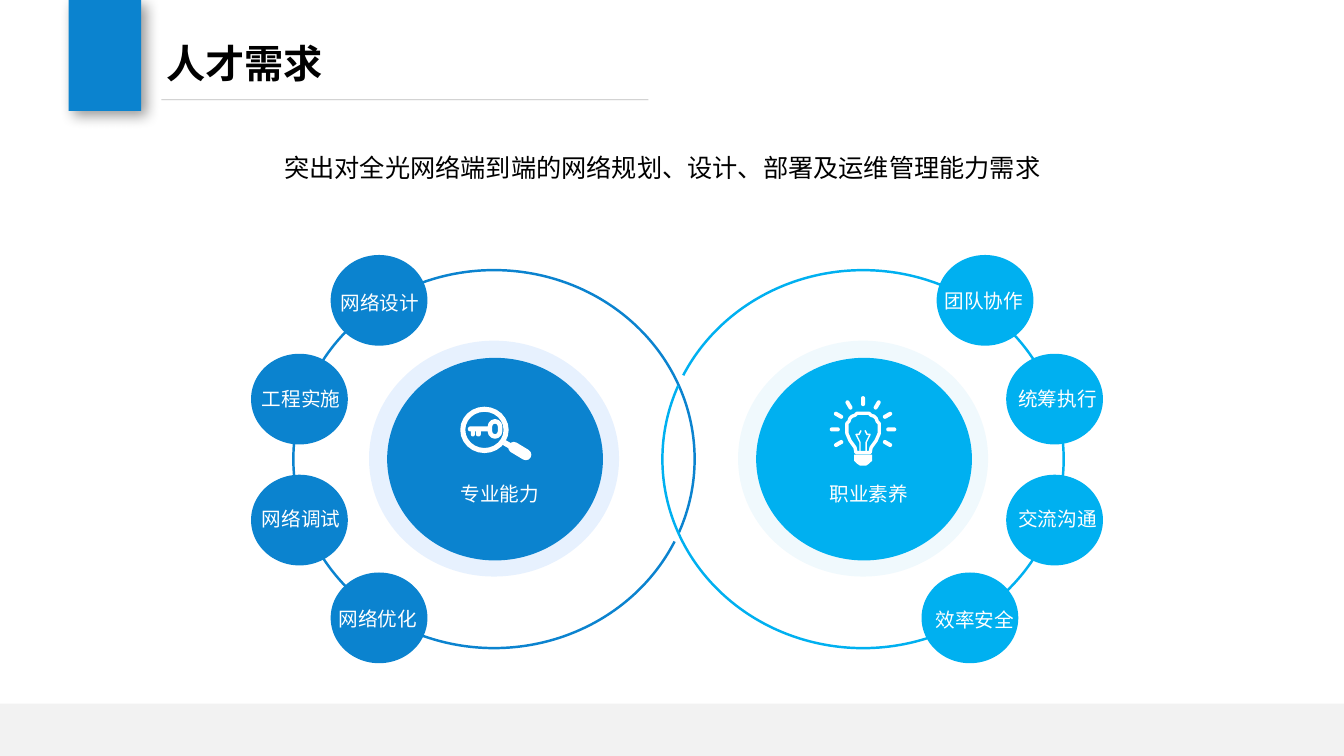
import math
from dataclasses import dataclass

import lxml.etree
import pptx
import pptx.dml.color
import pptx.enum.shapes
import pptx.enum.text
import pptx.oxml.ns
import pptx.util

SHAPE = pptx.enum.shapes.MSO_SHAPE
qn = pptx.oxml.ns.qn


@dataclass(frozen=True)
class Theme:
    blue: str = "0B83CF"
    cyan: str = "00B0F0"
    blue_halo: str = "1D78FA"
    cyan_halo: str = "6EC7EF"
    footer: str = "F2F2F2"
    rule: str = "808080"
    ink: str = "000000"
    white: str = "FFFFFF"
    title_font: str = "Arial"
    body_font: str = "Noto Sans CJK SC"
    title_size: int = 28
    lead_size: int = 18
    label_size: int = 14


def px(length):
    """100 px to the inch."""
    return pptx.util.Emu(round(length * 9144))


def rgb(color):
    return pptx.dml.color.RGBColor.from_string(color)


def add_xml(parent, tag, **values):
    attributes = {name: str(value) for name, value in values.items()}
    return lxml.etree.SubElement(parent, qn(tag), attributes)


def set_opacity(shape, percent):
    color = shape.element.spPr.find(".//" + qn("a:srgbClr"))
    add_xml(color, "a:alpha", val=percent * 1000)


class SlideBuilder:
    def __init__(self, page, theme):
        self.page = page
        self.theme = theme

    def paint(self, shape, fill=None, line=None, weight=1.75):
        shape.shadow.inherit = False
        if fill:
            shape.fill.solid()
            shape.fill.fore_color.rgb = rgb(fill)
        else:
            shape.fill.background()
        if line:
            shape.line.color.rgb = rgb(line)
            shape.line.width = pptx.util.Pt(weight)
        else:
            shape.line.fill.background()
        return shape

    def shape(self, kind, x, y, width, height, **style):
        shape = self.page.shapes.add_shape(kind, px(x), px(y), px(width), px(height))
        return self.paint(shape, **style)

    def pill(self, x, y, width, height, angle=0):
        pill = self.shape(SHAPE.ROUNDED_RECTANGLE, x, y, width, height, fill=self.theme.white)
        pill.adjustments[0] = 0.5
        pill.rotation = angle

    def arc(self, x, y, width, height, start, end, color):
        arc = self.shape(SHAPE.ARC, x, y, width, height, line=color)
        # Angles are held in 60000ths of a degree, adjustments in 100000ths
        for index, degrees in enumerate((start, end)):
            arc.adjustments[index] = degrees * 0.6

    def outline(self, points, closed=False, **style):
        builder = self.page.shapes.build_freeform(*points[0], scale=px(1))
        builder.add_line_segments(points[1:], close=closed)
        return self.paint(builder.convert_to_shape(), **style)

    def line(self, start, end, color, weight):
        line = self.page.shapes.add_connector(
            pptx.enum.shapes.MSO_CONNECTOR.STRAIGHT, *map(px, start + end))
        line.line.color.rgb = rgb(color)
        line.line.width = pptx.util.Pt(weight)
        add_xml(line.element.spPr, "a:effectLst")
        return line

    def fill_text(self, box, words, font, size, color, bold=False, spacing=None):
        para = box.text_frame.paragraphs[0]
        para.alignment = pptx.enum.text.PP_ALIGN.LEFT
        para.line_spacing = spacing
        span = para.add_run()
        span.text = words
        span.font.name = font
        span.font.size = pptx.util.Pt(size)
        span.font.bold = bold
        span.font.color.rgb = rgb(color)
        add_xml(box.element.find(".//" + qn("a:rPr")), "a:ea", typeface=self.theme.body_font)

    def title(self, words, x, y, width, height):
        box = self.page.shapes.title
        box.left, box.top, box.width, box.height = map(px, (x, y, width, height))
        box.text_frame.vertical_anchor = pptx.enum.text.MSO_ANCHOR.MIDDLE
        self.fill_text(box, words, self.theme.title_font, self.theme.title_size,
                       self.theme.ink, bold=True, spacing=0.9)

    def text(self, words, x, y, width, height, size, color, wrap=False, spacing=None):
        box = self.page.shapes.add_textbox(px(x), px(y), px(width), px(height))
        box.text_frame.word_wrap = wrap
        box.text_frame.auto_size = pptx.enum.text.MSO_AUTO_SIZE.SHAPE_TO_FIT_TEXT
        self.fill_text(box, words, self.theme.body_font, size, color, spacing=spacing)

    def label(self, words, x, y):
        self.text(words, x, y, 99, 34, self.theme.label_size, self.theme.white)

    def hub(self, x, name, color, halo, arc_angles, satellites):
        """Orbit, central disc with its name, and the small discs around it."""
        set_opacity(self.shape(SHAPE.OVAL, x, 338, 248, 234, fill=halo), 10)
        self.shape(SHAPE.OVAL, x + 18, 355, 214, 201, fill=color)
        self.arc(x - 75, 268, 398, 375, *arc_angles, color)
        self.label(name, x + 81, 473)
        for words, disc_x, disc_y, label_x, label_y in satellites:
            self.shape(SHAPE.OVAL, disc_x, disc_y, 96, 90, fill=color)
            self.label(words, label_x, label_y)

    def magnifier(self):
        white = self.theme.white
        self.shape(SHAPE.OVAL, 459, 406, 43, 41, line=white, weight=3.6)
        self.line((500, 439), (507, 443), white, 4)
        self.pill(503, 442, 25, 11, angle=31)
        # Key: bow, shaft and two teeth
        bow = self.shape(SHAPE.ROUNDED_RECTANGLE, 486, 418, 10, 15, line=white, weight=3.2)
        bow.adjustments[0] = 0.5
        for part in ((464, 423, 24, 5), (467, 424, 4, 9), (472, 424, 5, 9)):
            self.pill(*part)

    def bulb(self):
        white = self.theme.white
        center_x, center_y = 856, 426

        def mirror(points):
            return [(2 * center_x - x, y) for x, y in reversed(points)]

        # Rays
        for angle in range(-210, 31, 30):
            turn = math.radians(angle)
            self.pill(center_x + 28 * math.cos(turn) - 5,
                      center_y + 28 * math.sin(turn) - 2, 10, 4, angle % 180)
        # Glass
        dome = [(center_x + 16.5 * math.cos(math.radians(a)),
                 center_y + 16.5 * math.sin(math.radians(a))) for a in range(180, 361, 10)]
        side = [(849, 449), (848, 444), (843, 437), (840, 430)]
        self.outline(side + dome + mirror(side), closed=True, line=white, weight=2.4)
        # Filament
        wire = [(853, 448), (853, 439), (849, 431), (852, 431), (854, 427)]
        for points in (wire, mirror(wire)):
            self.outline(points, line=white, weight=1)
        # Screw base
        base = [(853, 462), (850, 460), (847, 457), (847, 451)]
        self.outline(base + mirror(base), closed=True, fill=white)


def main():
    theme = Theme()
    deck = pptx.Presentation()
    deck.slide_width, deck.slide_height = px(1333), px(750)
    slide = SlideBuilder(deck.slides.add_slide(deck.slide_layouts.get_by_name("Title Only")), theme)

    # Frame: tab with a shadow, footer band, heading rule
    tab = slide.shape(SHAPE.RECTANGLE, 68, 0, 72, 110, fill=theme.blue)
    shadow = add_xml(tab.element.spPr.find(qn("a:effectLst")), "a:outerShdw",
                     blurRad=pptx.util.Pt(10), dist=pptx.util.Pt(5), dir=45 * 60000,
                     algn="tl", rotWithShape=0)
    add_xml(add_xml(shadow, "a:srgbClr", val=theme.ink), "a:alpha", val=40000)
    slide.shape(SHAPE.RECTANGLE, 0, 698, 1333, 52, fill=theme.footer)
    set_opacity(slide.line((160, 99), (643, 99), theme.rule, 0.5), 53)

    # Heading and lead sentence
    slide.title("人才需求", 155, 36, 847, 59)
    slide.text("突出对全光网络端到端的网络规划、设计、部署及运维管理能力需求",
               272, 137, 775, 46, theme.lead_size, theme.ink, wrap=True, spacing=1.3)

    # Two hubs; each satellite: words, disc x and y, label x and y
    slide.hub(366, "专业能力", theme.blue, theme.blue_halo, (24.52, 21.65), [
        ("网络设计", 328, 253, 328, 284),
        ("工程实施", 249, 351, 250, 379),
        ("网络调试", 249, 471, 250, 498),
        ("网络优化", 328, 568, 326, 597),
    ])
    slide.magnifier()
    slide.hub(732, "职业素养", theme.cyan, theme.cyan_halo, (205.01, 201.72), [
        ("团队协作", 929, 253, 927, 282),
        ("统筹执行", 998, 351, 1000, 379),
        ("交流沟通", 998, 471, 1000, 498),
        ("效率安全", 914, 568, 918, 598),
    ])
    slide.bulb()

    deck.save("out.pptx")


if __name__ == "__main__":
    main()
